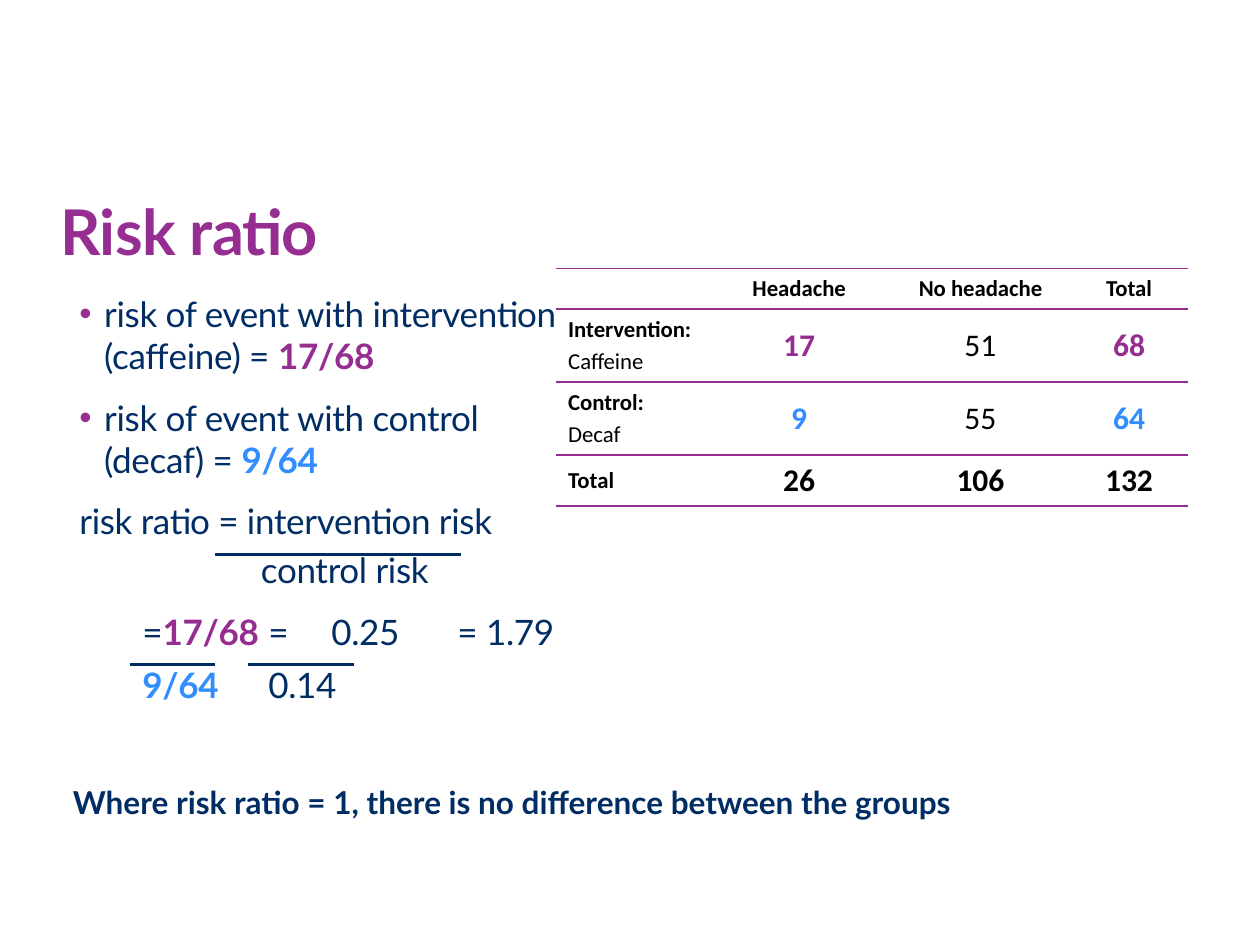
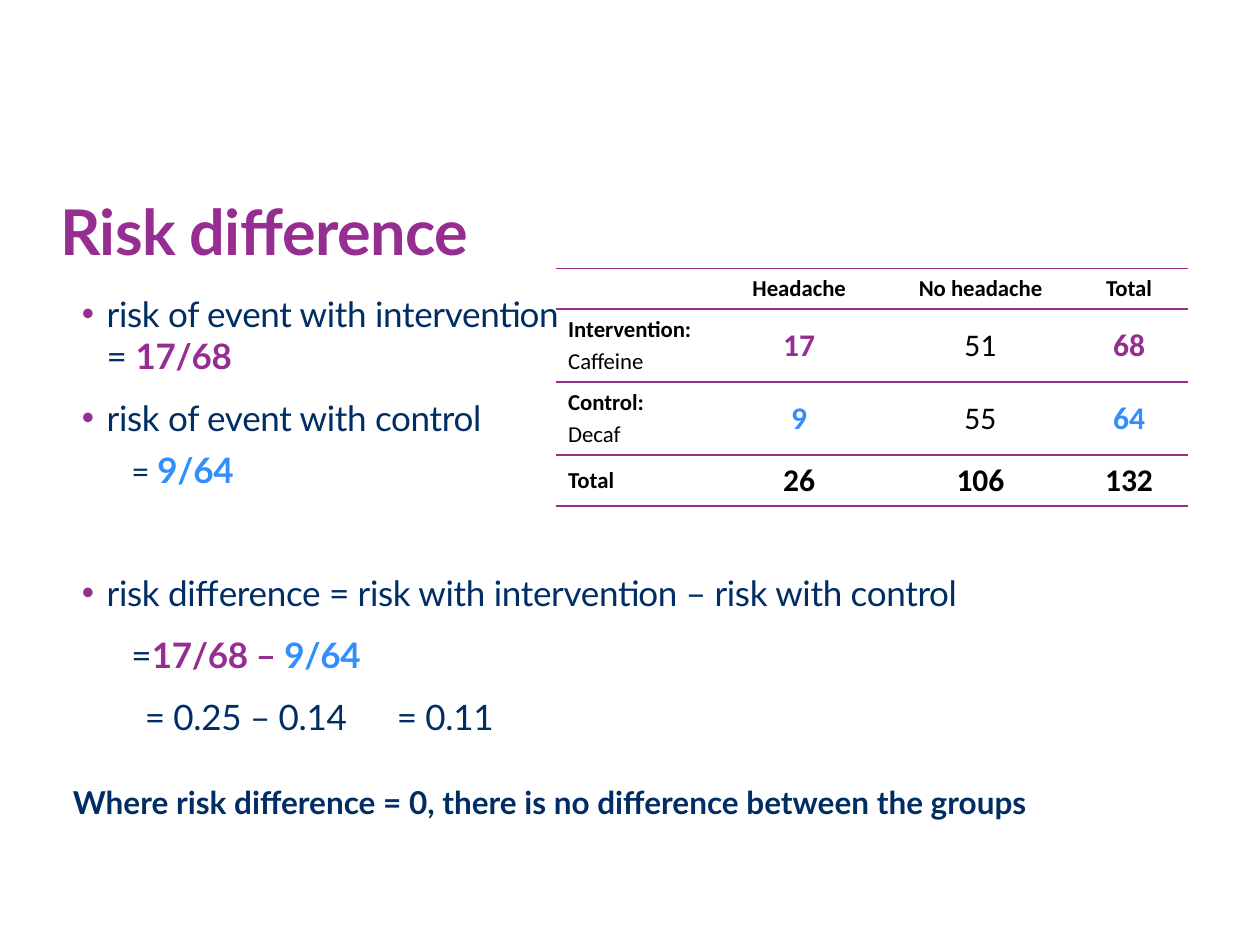
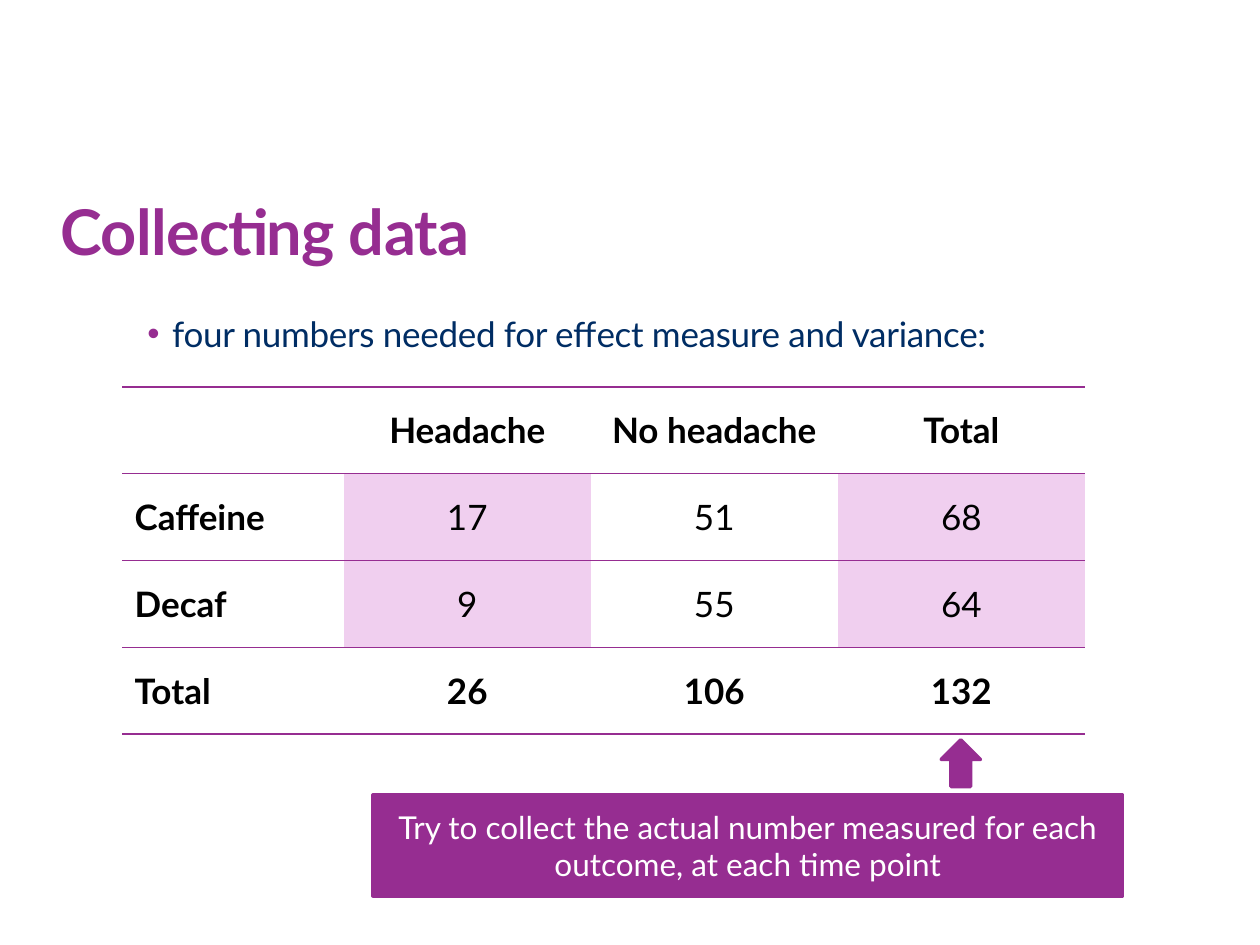
import pptx
import pptx.dml.color
import pptx.enum.shapes
import pptx.enum.text
import pptx.oxml
import pptx.oxml.ns
import pptx.util
from pptx.util import Cm, Pt

PURPLE, NAVY, BLUE = "962D91", "002D64", "328EFF"
BLACK, WHITE, PINK = "000000", "FFFFFF", "F0CFEF"
PLAIN_TABLE_STYLE = "{2D5ABB26-0587-4C30-8999-92F81FD0307C}"
NAMESPACE = pptx.oxml.ns.nsdecls("a")


def rgb(hex_color):
    return pptx.dml.color.RGBColor.from_string(hex_color)


def add_run(paragraph, text, size, color, bold=False, font="Lato", spacing=0):
    """Add one formatted run; spacing is in hundredths of a point."""
    run = paragraph.add_run()
    run.text = text
    run.font.size = Pt(size)
    run.font.name = font
    run.font.bold = bold
    run.font.color.rgb = rgb(color)
    if spacing:
        run._r.get_or_add_rPr().set("spc", str(spacing))


presentation = pptx.Presentation()
presentation.slide_width = Cm(25.4)
presentation.slide_height = Cm(19.05)
layout = presentation.slide_layouts[1]

# Each paragraph: space before (pt), left indent (cm), bulleted, tab stops (cm), runs.
# Each run: text, colour and, where it is not 20 pt, size.
ratio_paragraphs = [
    (0, 0.5, True, [], [("risk of event with intervention (caffeine) = ", NAVY), ("17/68", PURPLE)]),
    (11.3, 0.5, True, [], [("risk of event with control", NAVY), ("\n", NAVY),
                           ("(decaf) = ", NAVY), ("9/64", BLUE)]),
    (11.3, 0, False, [], [("risk ratio = intervention risk", NAVY)]),
    (4, 3.66, False, [], [("control risk", NAVY)]),
    (11.3, 0, False, [1, 3.68, 4.42, 6.16],
     [("\t=", NAVY), ("17/68", PURPLE), ("\t=\t0.25\t= 1.79", NAVY)]),
    (6, 0, False, [1.57, 4.31], [("\t9/64", BLUE), ("\t0.14", NAVY)]),
]
difference_paragraphs = [
    (0, 0.5, True, [], [("risk of event with intervention", NAVY), ("\n", NAVY),
                        ("= ", NAVY), ("17/68", PURPLE)]),
    (11.3, 0.5, True, [], [("risk of event with control", NAVY)]),
    (5.7, 1, False, [], [("= ", NAVY, 18), ("9/64", BLUE)]),
    (46.6, 0.5, True, [], [("risk difference = risk with intervention – risk with control", NAVY)]),
    (11.3, 1, False, [], [("=", NAVY), ("17/68 – ", PURPLE), ("9/64", BLUE)]),
    (11.3, 0, False, [1, 5.42], [("\t= 0.25 – 0.14\t= 0.11", NAVY)]),
]
collecting_paragraphs = [
    (0, 0.5, True, [], [("four numbers needed for effect measure and variance:", NAVY)]),
]

small_table = {
    "position": (11.2, 5.41), "columns": (3.07, 3.68, 3.63, 2.36),
    "rows": (0.82, 1.47, 1.47, 1.02), "font": "Calibri", "label_size": 13, "number_size": 18,
    "groups": ("Intervention:\nCaffeine", "Control:\nDecaf"),
    "highlight_colors": {1: PURPLE, 2: BLUE}, "highlight_fill": None,
}
large_table = {
    "position": (2.46, 7.8), "columns": (4.47, 4.98, 4.98, 4.98),
    "rows": (1.75,) * 4, "font": "Lato", "label_size": 20, "number_size": 20,
    "groups": ("Caffeine", "Decaf"),
    "highlight_colors": {}, "highlight_fill": PINK,
}

slide_contents = [
    ("Risk ratio", (1.6, 5.89, 11.1, 9.32), ratio_paragraphs, small_table,
     "Where risk ratio = 1, there is no difference between the groups"),
    ("Risk difference", (1.65, 5.89, 18.64, 9.32), difference_paragraphs, small_table,
     "Where risk difference = 0, there is no difference between the groups"),
    ("Collecting data", (2.97, 6.3, 22.43, 1.14), collecting_paragraphs, large_table, None),
]

for title_text, body_box, paragraphs, design, note_text in slide_contents:
    slide = presentation.slides.add_slide(layout)
    title, body = slide.placeholders
    for placeholder, box in ((title, (1.22, 3.66, 17, 1.75)), (body, body_box)):
        placeholder.left, placeholder.top, placeholder.width, placeholder.height = map(Cm, box)
        frame = placeholder.text_frame
        frame.margin_left = frame.margin_top = frame.margin_right = frame.margin_bottom = 0
        frame.auto_size = pptx.enum.text.MSO_AUTO_SIZE.NONE
        frame.word_wrap = True

    title.text_frame.vertical_anchor = pptx.enum.text.MSO_ANCHOR.BOTTOM
    paragraph = title.text_frame.paragraphs[0]
    paragraph.alignment = pptx.enum.text.PP_ALIGN.LEFT
    add_run(paragraph, title_text, 36, PURPLE, bold=True, spacing=-40)

    for index, (space_before, indent, bulleted, tab_stops, runs) in enumerate(paragraphs):
        frame = body.text_frame
        paragraph = frame.add_paragraph() if index else frame.paragraphs[0]
        properties = paragraph._p.get_or_add_pPr()
        properties.set("marL", str(Cm(indent)))
        properties.set("indent", str(-Cm(indent) if bulleted else 0))
        if bulleted:
            elements = [f'<a:buClr {NAMESPACE}><a:srgbClr val="{PURPLE}"/></a:buClr>',
                        f'<a:buFont {NAMESPACE} typeface="Arial"/>',
                        f'<a:buChar {NAMESPACE} char="•"/>']
        else:
            elements = [f"<a:buNone {NAMESPACE}/>"]
        if tab_stops:
            tabs = "".join(f'<a:tab pos="{Cm(stop)}" algn="l"/>' for stop in tab_stops)
            elements.append(f"<a:tabLst {NAMESPACE}>{tabs}</a:tabLst>")
        for element in elements:
            properties.append(pptx.oxml.parse_xml(element))
        paragraph.space_before = Pt(space_before)
        for text, color, *size in runs:
            if text == "\n":
                paragraph.add_line_break()
            else:
                add_run(paragraph, text, size[0] if size else 20, color,
                        bold=color != NAVY, spacing=-20)

    left, top = design["position"]
    table_shape = slide.shapes.add_table(
        4, 4, Cm(left), Cm(top), Cm(sum(design["columns"])), Cm(sum(design["rows"])))
    table = table_shape.table
    table.first_row = table.horz_banding = False
    table._tbl.tblPr.find(pptx.oxml.ns.qn("a:tableStyleId")).text = PLAIN_TABLE_STYLE
    for column, width in zip(table.columns, design["columns"]):
        column.width = Cm(width)
    for row, height in zip(table.rows, design["rows"]):
        row.height = Cm(height)

    first_group, second_group = design["groups"]
    table_rows = [
        ("", "Headache", "No headache", "Total"),
        (first_group, "17", "51", "68"),
        (second_group, "9", "55", "64"),
        ("Total", "26", "106", "132"),
    ]
    for row_index, texts in enumerate(table_rows):
        for column_index, text in enumerate(texts):
            cell = table.cell(row_index, column_index)
            cell.vertical_anchor = pptx.enum.text.MSO_ANCHOR.MIDDLE
            is_label = row_index == 0 or column_index == 0
            is_highlight = row_index in (1, 2) and column_index in (1, 3)
            color = design["highlight_colors"].get(row_index, BLACK) if is_highlight else BLACK
            size = design["label_size"] if is_label else design["number_size"]
            for line_index, line in enumerate(text.split("\n")):
                frame = cell.text_frame
                paragraph = frame.add_paragraph() if line_index else frame.paragraphs[0]
                if column_index:
                    paragraph.alignment = pptx.enum.text.PP_ALIGN.CENTER
                if line_index:
                    paragraph.space_before = Pt(2.6)
                bold = line_index == 0 and (is_label or row_index == 3 or color != BLACK)
                if line:
                    add_run(paragraph, line, size, color, bold, design["font"])
                else:
                    paragraph._p.get_or_add_endParaRPr().set("sz", str(size * 100))

            for edge, ruled_rows in (("lnT", (0, 1, 3)), ("lnB", (0, 2, 3))):
                if row_index in ruled_rows:
                    cell._tc.get_or_add_tcPr().append(pptx.oxml.parse_xml(
                        f'<a:{edge} {NAMESPACE} w="{Pt(1)}"><a:solidFill>'
                        f'<a:srgbClr val="{PURPLE}"/></a:solidFill></a:{edge}>'))
            if is_highlight and design["highlight_fill"]:
                cell.fill.solid()
                cell.fill.fore_color.rgb = rgb(design["highlight_fill"])
            else:
                cell.fill.background()

    if note_text:
        note = slide.shapes.add_textbox(Cm(1.22), Cm(15.67), Cm(23.39), Cm(1.02))
        note.text_frame.word_wrap = True
        add_run(note.text_frame.paragraphs[0], note_text, 18, NAVY, bold=True)

ratio_slide, _, collecting_slide = presentation.slides

for start, end, height in ((4.34, 9.3, 11.18), (2.62, 4.34, 13.39), (5, 7.14, 13.39)):
    fraction_bar = ratio_slide.shapes.add_connector(
        pptx.enum.shapes.MSO_CONNECTOR.STRAIGHT, Cm(start), Cm(height), Cm(end), Cm(height))
    fraction_bar.line.color.rgb = rgb("002C62")
    fraction_bar.line.width = Pt(1.5)
    fraction_bar._element.spPr.append(pptx.oxml.parse_xml(f"<a:effectLst {NAMESPACE}/>"))

callout = collecting_slide.shapes.add_shape(
    pptx.enum.shapes.MSO_SHAPE.RECTANGLE, Cm(7.52), Cm(16.03), Cm(15.11), Cm(2.03))
arrow = collecting_slide.shapes.add_shape(
    pptx.enum.shapes.MSO_SHAPE.RIGHT_ARROW, Cm(18.9), Cm(14.99), Cm(0.94), Cm(0.79))
arrow.rotation = 270
for shape in (callout, arrow):
    shape.shadow.inherit = False
    shape.fill.solid()
    shape.fill.fore_color.rgb = rgb(PURPLE)
    shape.line.color.rgb = rgb(PURPLE)
    shape.line.width = Pt(2)
callout.text_frame.word_wrap = True
callout.text_frame.vertical_anchor = pptx.enum.text.MSO_ANCHOR.MIDDLE
paragraph = callout.text_frame.paragraphs[0]
paragraph.alignment = pptx.enum.text.PP_ALIGN.CENTER
add_run(paragraph, "Try to collect the actual number measured for each outcome, at each time point",
        18, WHITE)

presentation.save("out.pptx")
